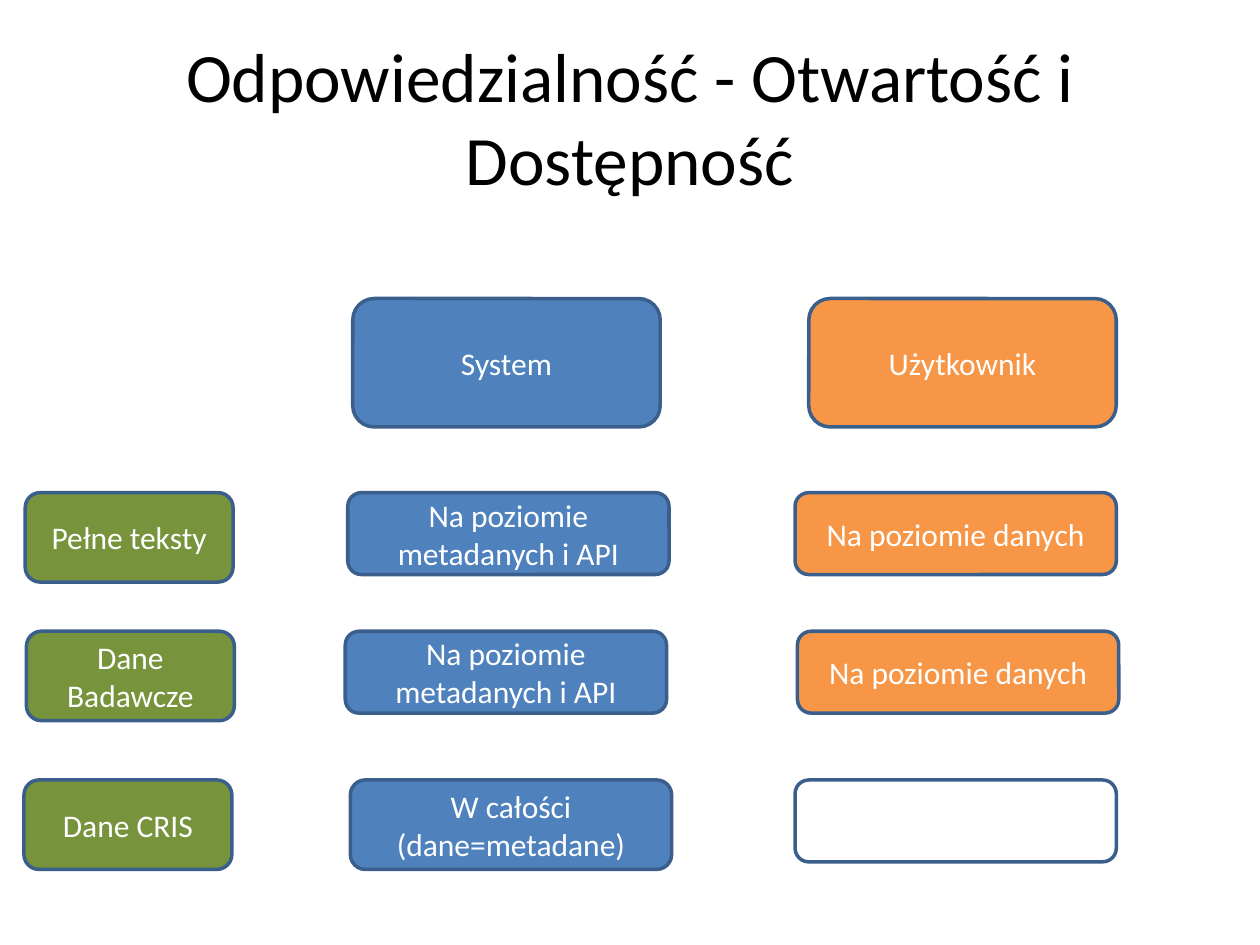
from dataclasses import dataclass

from pptx import Presentation
from pptx.dml.color import RGBColor
from pptx.enum.shapes import MSO_SHAPE
from pptx.enum.text import MSO_ANCHOR, MSO_AUTO_SIZE, PP_ALIGN
from pptx.util import Pt

ROUNDED = MSO_SHAPE.ROUNDED_RECTANGLE
CENTER = PP_ALIGN.CENTER
MIDDLE = MSO_ANCHOR.MIDDLE
NO_AUTOFIT = MSO_AUTO_SIZE.NONE
TITLE_ONLY = 5


@dataclass(frozen=True)
class Theme:
    font: str = "Calibri"
    title_size: float = 39.6
    label_size: float = 18
    outline_width: float = 2
    ink: str = "000000"
    white: str = "FFFFFF"
    outline: str = "3A5F8C"
    data_kind: str = "77933C"
    system: str = "4F81BD"
    user: str = "F79646"


THEME = Theme()

ROW_TOPS = (281.5, 360.7, 445.7)
# Each row's cells: (text, shift from the column's left edge, height)
COLUMNS = (
    (13.7, 118.8, THEME.data_kind, (
        ("Pełne teksty", 0.7, 51.1),
        ("Dane Badawcze", 1.4, 51.1),
        ("Dane CRIS", 0, 51.1))),
    (197.3, 183.6, THEME.system, (
        ("Na poziomie metadanych i API", 1.4, 46.8),
        ("Na poziomie metadanych i API", 0, 46.8),
        ("W całości (dane=metadane)", 2.9, 51.1))),
    (454.3, 183.6, THEME.user, (
        ("Na poziomie danych", 0, 46.8),
        ("Na poziomie danych", 1.4, 46.8),
        ("", 0, 46.8))),
)
HEADERS = (("System", 201.6, THEME.system), ("Użytkownik", 462.2, THEME.user))


def write(frame, text, *, size, color):
    frame.word_wrap = True
    frame.auto_size = NO_AUTOFIT
    frame.vertical_anchor = MIDDLE
    paragraph = frame.paragraphs[0]
    paragraph.alignment = CENTER
    run = paragraph.add_run()
    run.text = text
    run.font.name = THEME.font
    run.font.size = Pt(size)
    run.font.color.rgb = RGBColor.from_string(color)


def add_title(slide, text, left, top, width, height):
    title = slide.shapes.title
    title.left, title.top = Pt(left), Pt(top)
    title.width, title.height = Pt(width), Pt(height)
    write(title.text_frame, text, size=THEME.title_size, color=THEME.ink)


def add_card(slide, text, left, top, width, height, fill):
    card = slide.shapes.add_shape(ROUNDED, Pt(left), Pt(top), Pt(width), Pt(height))
    card.shadow.inherit = False
    card.fill.solid()
    card.fill.fore_color.rgb = RGBColor.from_string(fill)
    card.line.color.rgb = RGBColor.from_string(THEME.outline)
    card.line.width = Pt(THEME.outline_width)
    if text:
        write(card.text_frame, text, size=THEME.label_size, color=THEME.white)


def add_headers(slide, top, width, height):
    for role, left, fill in HEADERS:
        add_card(slide, role, left, top, width, height, fill)


def add_column(slide, left, width, fill, cells):
    for top, (text, shift, height) in zip(ROW_TOPS, cells):
        add_card(slide, text, left + shift, top, width, height,
                 fill if text else THEME.white)


def main():
    deck = Presentation()
    deck.slide_width, deck.slide_height = Pt(720), Pt(540)
    slide = deck.slides.add_slide(deck.slide_layouts[TITLE_ONLY])
    add_title(slide, "Odpowiedzialność - Otwartość i Dostępność", 36, 21.6, 648, 90)
    add_headers(slide, 170.6, 175.7, 73.4)
    for left, width, fill, cells in COLUMNS:
        add_column(slide, left, width, fill, cells)
    deck.save("out.pptx")


if __name__ == "__main__":
    main()
